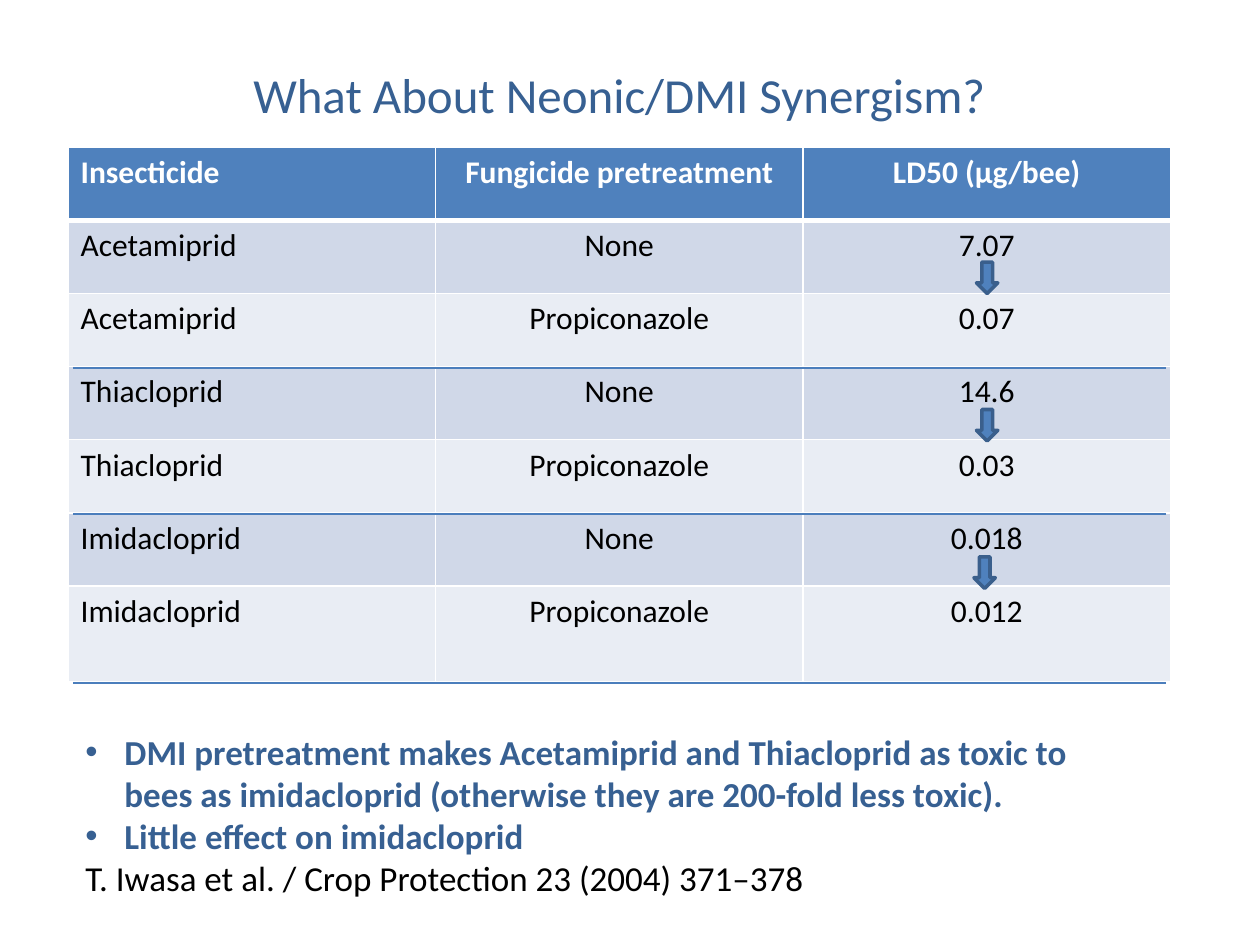
from lxml import etree
from pptx import Presentation
from pptx.dml.color import RGBColor
from pptx.enum.shapes import MSO_CONNECTOR, MSO_SHAPE
from pptx.enum.text import MSO_AUTO_SIZE, PP_ALIGN
from pptx.oxml.ns import qn
from pptx.util import Inches, Pt

LEFT, CENTER = PP_ALIGN.LEFT, PP_ALIGN.CENTER
DOWN_ARROW = MSO_SHAPE.DOWN_ARROW
STRAIGHT = MSO_CONNECTOR.STRAIGHT
FIT_SHAPE = MSO_AUTO_SIZE.SHAPE_TO_FIT_TEXT

WHITE = RGBColor(0xFF, 0xFF, 0xFF)
BLACK = RGBColor(0x00, 0x00, 0x00)
NAVY = RGBColor(0x37, 0x60, 0x92)
BLUE = RGBColor(0x4F, 0x81, 0xBD)
OUTLINE = RGBColor(0x3A, 0x5F, 0x8C)
RULE = RGBColor(0x4B, 0x7E, 0xBC)
BANDS = RGBColor(0xD0, 0xD8, 0xE8), RGBColor(0xE9, 0xED, 0xF4)

TITLE = {"size": Pt(28), "color": NAVY}
HEADER = {"size": Pt(18), "color": WHITE, "bold": True}
BODY = {"size": Pt(18), "color": BLACK, "bold": False}
POINT = {"size": Pt(20), "color": NAVY, "bold": True}
SOURCE = {"size": Pt(20), "color": BLACK, "bold": False}

ROWS = [
    ("Insecticide", "Fungicide pretreatment", "LD50 (µg/bee)"),
    ("Acetamiprid", "None", "7.07"),
    ("Acetamiprid", "Propiconazole", "0.07"),
    ("Thiacloprid", "None", "14.6"),
    ("Thiacloprid", "Propiconazole", "0.03"),
    ("Imidacloprid", "None", "0.018"),
    ("Imidacloprid", "Propiconazole", "0.012"),
]
NOTES = [
    ("DMI pretreatment makes Acetamiprid and Thiacloprid as toxic to bees "
     "as imidacloprid (otherwise they are 200-fold less toxic).", POINT, True),
    ("Little effect on imidacloprid", POINT, True),
    ("T. Iwasa et al. / Crop Protection 23 (2004) 371–378", SOURCE, False),
]


class SlideBuilder:
    font = "Calibri"

    def __init__(self, prs):
        self.s = prs.slides.add_slide(prs.slide_layouts[6])

    def add_text(self, p, text, style, align=LEFT):
        p.alignment = align
        r = p.add_run()
        r.text = text
        for name, value in {"name": self.font, **style}.items():
            if name == "color":
                r.font.color.rgb = value
            else:
                setattr(r.font, name, value)

    def bullet(self, p):
        pPr = p._p.get_or_add_pPr()
        pPr.set("marL", str(Inches(0.31)))
        pPr.set("indent", str(Inches(-0.31)))
        etree.SubElement(pPr, qn("a:buFont"), typeface="Arial")
        etree.SubElement(pPr, qn("a:buChar"), char="•")

    def text(self, x, y, w, h, paragraphs, align=LEFT):
        sp = self.s.shapes.add_textbox(Inches(x), Inches(y), Inches(w), Inches(h))
        tf = sp.text_frame
        tf.word_wrap = True
        tf.auto_size = FIT_SHAPE
        for i, (text, style, bulleted) in enumerate(paragraphs):
            p = tf.add_paragraph() if i else tf.paragraphs[0]
            if bulleted:
                self.bullet(p)
            self.add_text(p, text, style, align)

    def border(self, cell, side, width):
        tcPr = cell._tc.get_or_add_tcPr()
        ln = etree.SubElement(tcPr, qn(f"a:ln{side}"), w=str(Pt(width)))
        fill = etree.SubElement(ln, qn("a:solidFill"))
        etree.SubElement(fill, qn("a:srgbClr"), val=str(WHITE))

    def table(self, x, y, w, heights, rows):
        cols = len(rows[0])
        tbl = self.s.shapes.add_table(len(rows), cols, Inches(x), Inches(y),
                                      Inches(w), Inches(sum(heights))).table
        for i, (row, height) in enumerate(zip(rows, heights)):
            tbl.rows[i].height = Inches(height)
            for j, text in enumerate(row):
                cell = tbl.cell(i, j)
                for side in "LRTB":
                    heavy = (i, side) in ((0, "B"), (1, "T"))
                    self.border(cell, side, 3 if heavy else 1)
                cell.fill.solid()
                cell.fill.fore_color.rgb = BANDS[(i - 1) % 2] if i else BLUE
                self.add_text(cell.text_frame.paragraphs[0], text,
                              BODY if i else HEADER, CENTER if j else LEFT)

    def arrow(self, x, y):
        sp = self.s.shapes.add_shape(DOWN_ARROW, Inches(x), Inches(y),
                                     Inches(0.17), Inches(0.25))
        sp.shadow.inherit = False
        sp.fill.solid()
        sp.fill.fore_color.rgb = BLUE
        sp.line.color.rgb = OUTLINE
        sp.line.width = Pt(2)

    def rule(self, x1, x2, y):
        line = self.s.shapes.add_connector(STRAIGHT, Inches(x1), Inches(y),
                                           Inches(x2), Inches(y))
        line.line.color.rgb = RULE
        line.line.width = Pt(0.75)
        etree.SubElement(line._element.spPr, qn("a:effectLst"))


def main():
    prs = Presentation()
    prs.slide_width, prs.slide_height = Inches(10), Inches(7.5)
    slide = SlideBuilder(prs)
    slide.text(1.08, 0.46, 7.67, 0.57,
               [("What About Neonic/DMI Synergism?", TITLE, False)], CENTER)
    slide.table(0.54, 1.17, 8.75, [0.58] * 6 + [0.76], ROWS)
    slide.text(0.58, 5.75, 8.17, 1.45, NOTES)
    for i, x in enumerate((7.75, 7.75, 7.73)):
        slide.arrow(x, 2.08 + 1.17 * i)
    for y in (2.92, 4.08, 5.42):
        slide.rule(0.58, 9.25, y)
    prs.save("out.pptx")


if __name__ == "__main__":
    main()
